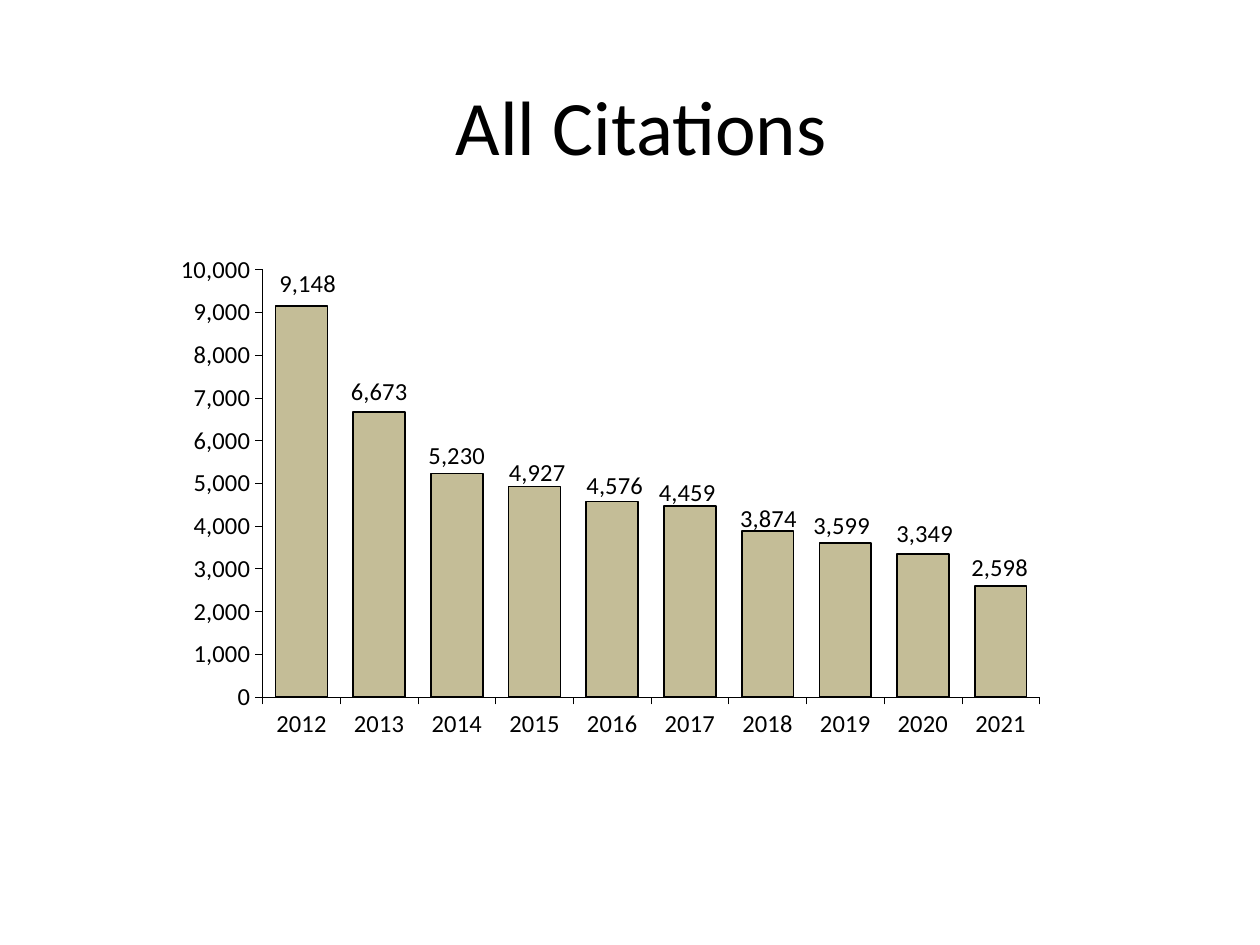
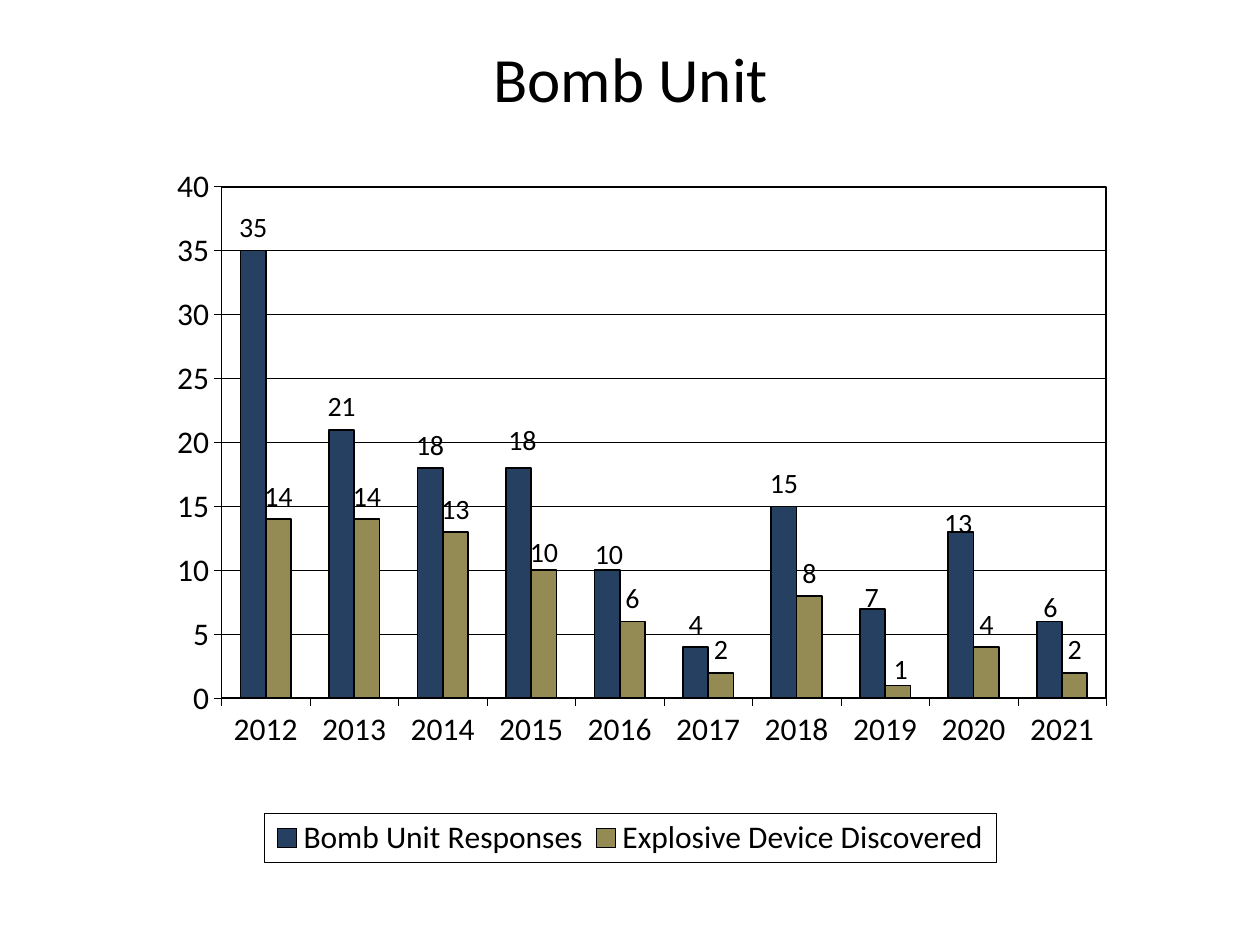
from dataclasses import dataclass

from lxml import etree
from pptx import Presentation
from pptx.chart.data import CategoryChartData
from pptx.dml.color import RGBColor
from pptx.enum.chart import (XL_CHART_TYPE, XL_LABEL_POSITION, XL_LEGEND_POSITION,
                             XL_TICK_MARK)
from pptx.enum.text import MSO_ANCHOR, PP_ALIGN
from pptx.oxml.ns import qn
from pptx.util import Cm, Pt

CLUSTERED = XL_CHART_TYPE.COLUMN_CLUSTERED
OUTSIDE_END = XL_LABEL_POSITION.OUTSIDE_END
LEGEND_BOTTOM = XL_LEGEND_POSITION.BOTTOM
TICK_OUT, TICK_NONE = XL_TICK_MARK.OUTSIDE, XL_TICK_MARK.NONE
MIDDLE, CENTER = MSO_ANCHOR.MIDDLE, PP_ALIGN.CENTER


@dataclass(frozen=True)
class Theme:
    font: str = "Calibri"
    ink: str = "000000"
    sand: str = "C4BD97"
    navy: str = "254061"
    olive: str = "948A54"
    large_title: int = 44
    title: int = 36
    large_text: int = 18
    text: int = 16
    small_text: int = 14
    hairline: float = 0.25
    outline: float = 1


THEME = Theme()
YEARS = [str(year) for year in range(2012, 2022)]


def color(value):
    return RGBColor.from_string(value)


def style_font(font, size):
    font.name = THEME.font
    font.size = Pt(size)
    font.color.rgb = color(THEME.ink)


def style_line(line, width):
    line.color.rgb = color(THEME.ink)
    line.width = Pt(width)


def add_text(slide, box, text, *, size, align=CENTER, anchor=MIDDLE):
    frame = slide.shapes.add_textbox(*(Cm(length) for length in box)).text_frame
    frame.word_wrap = True
    frame.vertical_anchor = anchor
    paragraph = frame.paragraphs[0]
    paragraph.alignment = align
    run = paragraph.add_run()
    run.text = text
    style_font(run.font, size)


# Chart XML helpers
def set_layout(parent, position, index, *, inner=False):
    """Place a chart part; position is x, y and optionally width, height (0 to 1)."""
    for old in parent.findall(qn("c:layout")):
        parent.remove(old)
    layout = etree.Element(qn("c:layout"))
    manual = etree.SubElement(layout, qn("c:manualLayout"))
    values = []
    if inner:
        values.append(("layoutTarget", "inner"))
    if len(position) == 4:
        values += [("xMode", "edge"), ("yMode", "edge")]
    values += zip("xywh", position)
    for name, value in values:
        etree.SubElement(manual, qn(f"c:{name}"), val=str(value))
    parent.insert(index, layout)


def add_frame(parent, width):
    """Give a chart part a black border without a fill."""
    properties = etree.SubElement(parent, qn("c:spPr"))
    etree.SubElement(properties, qn("a:noFill"))
    line = etree.SubElement(properties, qn("a:ln"), w=str(int(Pt(width))))
    fill = etree.SubElement(line, qn("a:solidFill"))
    etree.SubElement(fill, qn("a:srgbClr"), val=THEME.ink)


# Chart parts
def style_axis(axis, size):
    axis.major_tick_mark = TICK_OUT
    axis.minor_tick_mark = TICK_NONE
    axis.has_major_gridlines = False
    style_line(axis.format.line, THEME.hairline)
    style_font(axis.tick_labels.font, size)


def style_series(series, fill, label_size, nudges):
    series.smooth = False if hasattr(series, "smooth") else None
    series.format.fill.solid()
    series.format.fill.fore_color.rgb = color(fill)
    style_line(series.format.line, THEME.outline)
    labels = series.data_labels
    labels.show_value = True
    labels.position = OUTSIDE_END
    style_font(labels.font, label_size)
    # Labels moved from their usual place, by year
    for year, offset in nudges.items():
        index = YEARS.index(str(year))
        label = series.points[index].data_label
        style_font(label.font, label_size)
        label.position = OUTSIDE_END
    for element in series._element.iter(qn("c:dLbl")):
        year = int(YEARS[int(element.find(qn("c:idx")).get("val"))])
        set_layout(element, nudges[year], 1)


def add_columns(slide, box, series_list, *, plot_box, top, step, axis_size, label_size,
                gap, overlap=0, number_format="General"):
    data = CategoryChartData(number_format=number_format)
    data.categories = YEARS
    for name, values, _, _ in series_list:
        data.add_series(name, values)
    chart = slide.shapes.add_chart(CLUSTERED, *(Cm(length) for length in box), data).chart
    chart.has_title = False
    chart.has_legend = False
    style_font(chart.font, axis_size)

    # Axes
    for axis in (chart.category_axis, chart.value_axis):
        style_axis(axis, axis_size)
    value_axis = chart.value_axis
    value_axis.minimum_scale, value_axis.maximum_scale = 0, top
    value_axis.major_unit = step
    value_axis.tick_labels.number_format = number_format
    value_axis.tick_labels.number_format_is_linked = False

    # Columns
    plot = chart.plots[0]
    plot.vary_by_categories = False
    plot.gap_width, plot.overlap = gap, overlap
    for series, (_, _, fill, nudges) in zip(plot.series, series_list):
        style_series(series, fill, label_size, nudges)
    set_layout(plot._element.getparent(), plot_box, 0, inner=True)
    return chart


# Slides
def add_citations_slide(presentation):
    slide = presentation.slides.add_slide(presentation.slide_layouts[6])
    add_text(slide, (2.13, 0.97, 21.6, 3.07), "All Citations", size=THEME.large_title)
    citations = [9148, 6673, 5230, 4927, 4576, 4459, 3874, 3599, 3349, 2598]
    nudges = {2012: (0.007, -0.003), 2014: (0, 0.005), 2015: (0.003, 0.013),
              2016: (0.003, 0.009), 2017: (-0.003, 0.013), 2018: (0.001, 0.015),
              2019: (-0.004, 0.005), 2020: (0.002, 0), 2021: (-0.001, 0.005)}
    add_columns(slide, (3.18, 5.08, 17.78, 10.16),
                [("Series 1", citations, THEME.sand, nudges)],
                plot_box=(0.119, 0.035, 0.881, 0.848), top=10000, step=1000,
                axis_size=THEME.small_text, label_size=THEME.small_text,
                gap=50, overlap=100, number_format="#,##0")


def add_bomb_unit_slide(presentation):
    slide = presentation.slides.add_slide(presentation.slide_layouts[6])
    add_text(slide, (2.34, 0.43, 20.75, 2.24), "Bomb Unit", size=THEME.title)
    responses = [35, 21, 18, 18, 10, 4, 15, 7, 13, 6]
    devices = [14, 14, 13, 10, 6, 2, 8, 1, 4, 2]
    response_nudges = {2015: (0.004, -0.007), 2016: (0.002, 0.01), 2019: (-0.001, 0.017),
                       2020: (-0.003, 0.02), 2021: (0.001, 0.013)}
    device_nudges = {2015: (0, 0.007), 2019: (0.003, 0.01)}
    chart = add_columns(
        slide, (2.92, 3.38, 19.56, 14.07),
        [("Bomb Unit Responses", responses, THEME.navy, response_nudges),
         ("Explosive Device Discovered", devices, THEME.olive, device_nudges)],
        plot_box=(0.079, 0.026, 0.912, 0.734), top=40, step=5,
        axis_size=THEME.large_text, label_size=THEME.text, gap=150)

    # Grid and plot border
    chart.value_axis.has_major_gridlines = True
    style_line(chart.value_axis.major_gridlines.format.line, THEME.hairline)
    add_frame(chart.plots[0]._element.getparent(), THEME.outline)

    # Framed legend
    chart.has_legend = True
    legend = chart.legend
    legend.position = LEGEND_BOTTOM
    legend.include_in_layout = False
    set_layout(legend._element, (0.123, 0.93, 0.755, 0.07), 1)
    add_frame(legend._element, THEME.hairline)


def main():
    presentation = Presentation()
    presentation.slide_width, presentation.slide_height = Cm(25.4), Cm(19.05)
    add_citations_slide(presentation)
    add_bomb_unit_slide(presentation)
    presentation.save("out.pptx")


if __name__ == "__main__":
    main()
